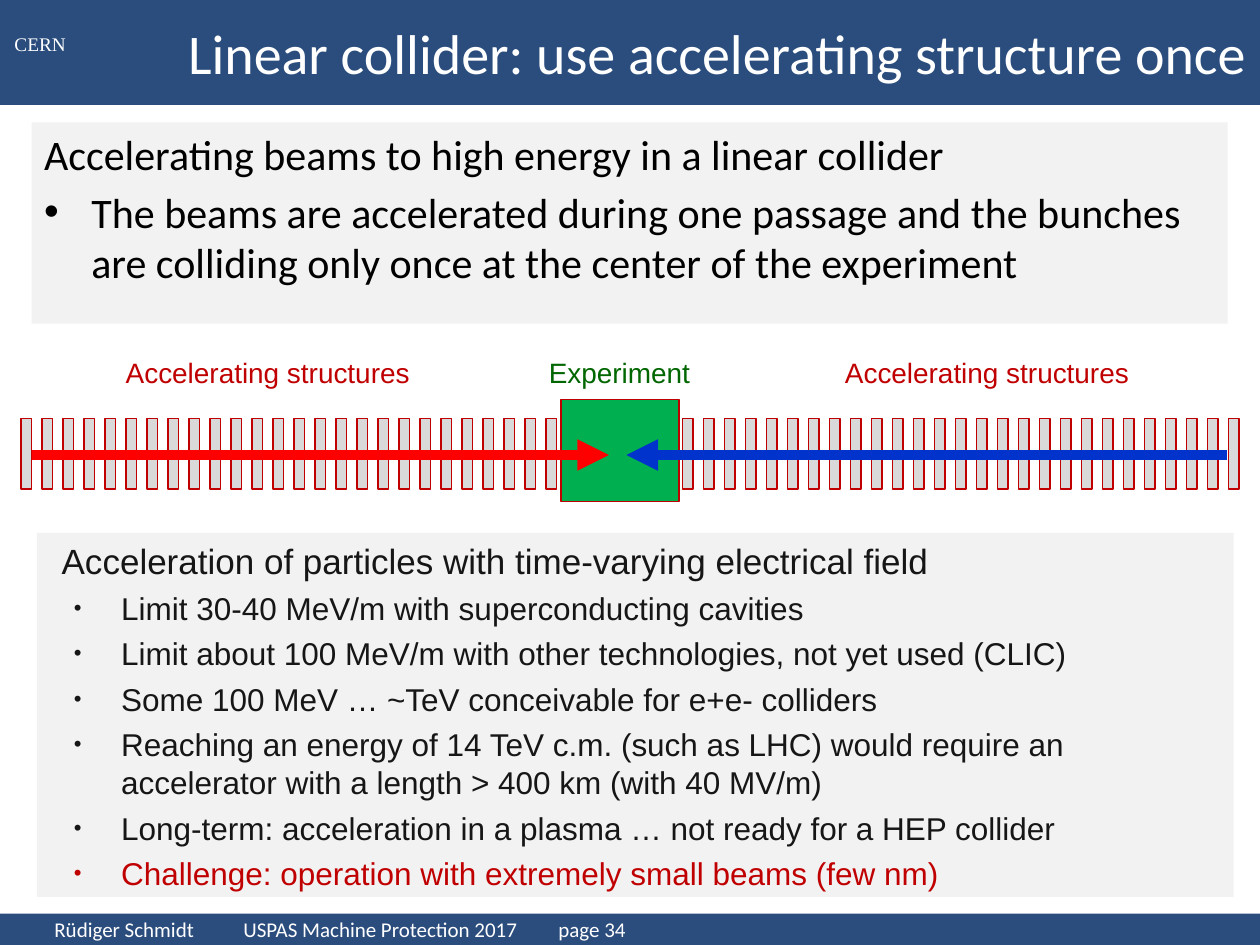
"""Build the slide on linear colliders and their accelerating structures."""
import pptx
import pptx.dml.color
import pptx.enum.shapes
import pptx.enum.text
import pptx.oxml
import pptx.oxml.ns
import pptx.util

Pt = pptx.util.Pt
RGBColor = pptx.dml.color.RGBColor
Align = pptx.enum.text.PP_ALIGN
Anchor = pptx.enum.text.MSO_ANCHOR
RECT = pptx.enum.shapes.MSO_SHAPE.RECTANGLE
LINE = pptx.enum.shapes.MSO_CONNECTOR.STRAIGHT

NAVY = RGBColor(0x06, 0x2F, 0x67)
WHITE = RGBColor(0xFF, 0xFF, 0xFF)
BLACK = RGBColor(0x00, 0x00, 0x00)
INK = RGBColor(0x16, 0x16, 0x16)
PANEL = RGBColor(0xF2, 0xF2, 0xF2)
GREY = RGBColor(0xD9, 0xD9, 0xD9)
CRIMSON = RGBColor(0xC0, 0x00, 0x00)
GREEN = RGBColor(0x00, 0xB0, 0x50)
FOREST = RGBColor(0x00, 0x66, 0x00)
RED = RGBColor(0xFF, 0x00, 0x00)
BLUE = RGBColor(0x00, 0x33, 0xCC)


def write(frame, text, size=16, face="Arial", color=INK, align=Align.LEFT, level=0,
          margin=0, indent=0, before=0, extra=()):
    """Fill the empty first paragraph of the frame, or add a new one."""
    para = frame.paragraphs[0] if not frame.text else frame.add_paragraph()
    para.alignment = align
    para.level = level
    para.space_before = Pt(before)
    props = para._p.get_or_add_pPr()
    props.set("marL", str(Pt(margin)))
    props.set("indent", str(Pt(indent)))
    for tag in extra:
        props.append(pptx.oxml.parse_xml(tag.replace("/>", f" {XMLNS}/>", 1) if tag.endswith("/>") and
                                         tag.count("<") == 1 else tag.replace(">", f" {XMLNS}>", 1)))
    run = para.add_run()
    run.text = text
    run.font.size = Pt(size)
    run.font.name = face
    run.font.color.rgb = color


def block(left, top, width, height, fill, edge=None):
    """Add a filled rectangle."""
    shape = slide.shapes.add_shape(RECT, Pt(left), Pt(top), Pt(width), Pt(height))
    shape.shadow.inherit = False
    shape.fill.solid()
    shape.fill.fore_color.rgb = fill
    if edge is None:
        shape.line.fill.background()
    else:
        shape.line.color.rgb = edge
        shape.line.width = Pt(0.75)
    return shape


XMLNS = pptx.oxml.ns.nsdecls("a")
PLAIN = ("<a:buNone/>",)
DOT = ('<a:buFont typeface="Arial"/>', '<a:buChar char="•"/>')
SMALL = ('<a:buSzPct val="70000"/>',) + DOT
TABS = ('<a:tabLst><a:tab pos="%d" algn="l"/><a:tab pos="%d" algn="r"/></a:tabLst>'
        % (Pt(134), Pt(662)),)

deck = pptx.Presentation()
deck.slide_width, deck.slide_height = Pt(720), Pt(540)
slide = deck.slides.add_slide(deck.slide_layouts[3])
title, intro, facts = slide.placeholders

for top, height in ((0, 60), (522, 18)):
    band = block(0, top, 720, height, NAVY)
    tint = band.fill._xPr.find(".//" + pptx.oxml.ns.qn("a:srgbClr"))
    tint.append(pptx.oxml.parse_xml(f'<a:alpha {XMLNS} val="85000"/>'))
    slide.shapes._spTree.insert(2 + (top > 0), band._element)

for holder, left, top, width, height in (
        (title, 60, 0, 660, 60), (intro, 18, 70, 683.5, 115), (facts, 21, 304.5, 684, 208)):
    holder.left, holder.top = Pt(left), Pt(top)
    holder.width, holder.height = Pt(width), Pt(height)
    holder.text_frame.auto_size = pptx.enum.text.MSO_AUTO_SIZE.NONE
    if holder is not title:
        holder.fill.solid()
        holder.fill.fore_color.rgb = PANEL

title.text_frame.vertical_anchor = Anchor.MIDDLE
write(title.text_frame, "Linear collider: use accelerating structure once",
      size=32, face="Calibri", color=WHITE, align=Align.RIGHT)

write(intro.text_frame, "Accelerating beams to high energy in a linear collider",
      size=24, face="Calibri", color=BLACK, margin=27, indent=-27, extra=PLAIN)
write(intro.text_frame, "The beams are accelerated during one passage and the bunches "
      "are colliding only once at the center of the experiment",
      size=24, face="Calibri", color=BLACK, margin=27, indent=-27, before=4, extra=DOT)

write(facts.text_frame, "Acceleration of particles with time-varying electrical field",
      size=20, level=1, margin=7, extra=PLAIN)
for text, color in (
        ("Limit 30-40 MeV/m with superconducting cavities", INK),
        ("Limit about 100 MeV/m with other technologies, not yet used (CLIC)", INK),
        ("Some 100 MeV … ~TeV conceivable for e+e- colliders", INK),
        ("Reaching an energy of 14 TeV c.m. (such as LHC) would require an "
         "accelerator with a length > 400 km (with 40 MV/m)", INK),
        ("Long-term: acceleration in a plasma … not ready for a HEP collider", INK),
        ("Challenge: operation with extremely small beams (few nm)", CRIMSON)):
    write(facts.text_frame, text, size=18, color=color, level=2,
          margin=41, indent=-27, before=4.4, extra=SMALL)

for start, count in ((12, 26), (390, 27)):
    for step in range(count):
        block(start + 12 * step, 239, 6, 40.5, GREY, CRIMSON)
block(320.5, 228.5, 67.5, 58, GREEN, CRIMSON)

for start, end, color in ((18, 348, RED), (701, 358, BLUE)):
    beam = slide.shapes.add_connector(LINE, Pt(start), Pt(260), Pt(end), Pt(260))
    beam.line.color.rgb = color
    beam.line.width = Pt(6)
    beam.line._get_or_add_ln().append(
        pptx.oxml.parse_xml(f'<a:tailEnd {XMLNS} type="triangle"/>'))
    beam._element.spPr.append(pptx.oxml.parse_xml(f"<a:effectLst {XMLNS}/>"))

for text, left, top, width, height, style in (
        ("Accelerating structures", 51, 198, 204, 30, {"color": CRIMSON}),
        ("Experiment", 300, 198, 108, 30, {"color": FOREST}),
        ("Accelerating structures", 462, 198, 204, 30, {"color": CRIMSON}),
        ("CERN", -1, 14.5, 48, 21, {"size": 11, "face": "Times New Roman", "color": WHITE}),
        ("Rüdiger Schmidt\tUSPAS Machine Protection 2017\tpage 34", 24, 522, 684, 18,
         {"size": 12, "face": "Calibri", "color": WHITE, "align": Align.LEFT, "extra": TABS})):
    label = slide.shapes.add_textbox(Pt(left), Pt(top), Pt(width), Pt(height)).text_frame
    label.word_wrap = True
    label.vertical_anchor = Anchor.MIDDLE
    write(label, text, **{"align": Align.CENTER, **style})

deck.save("out.pptx")
